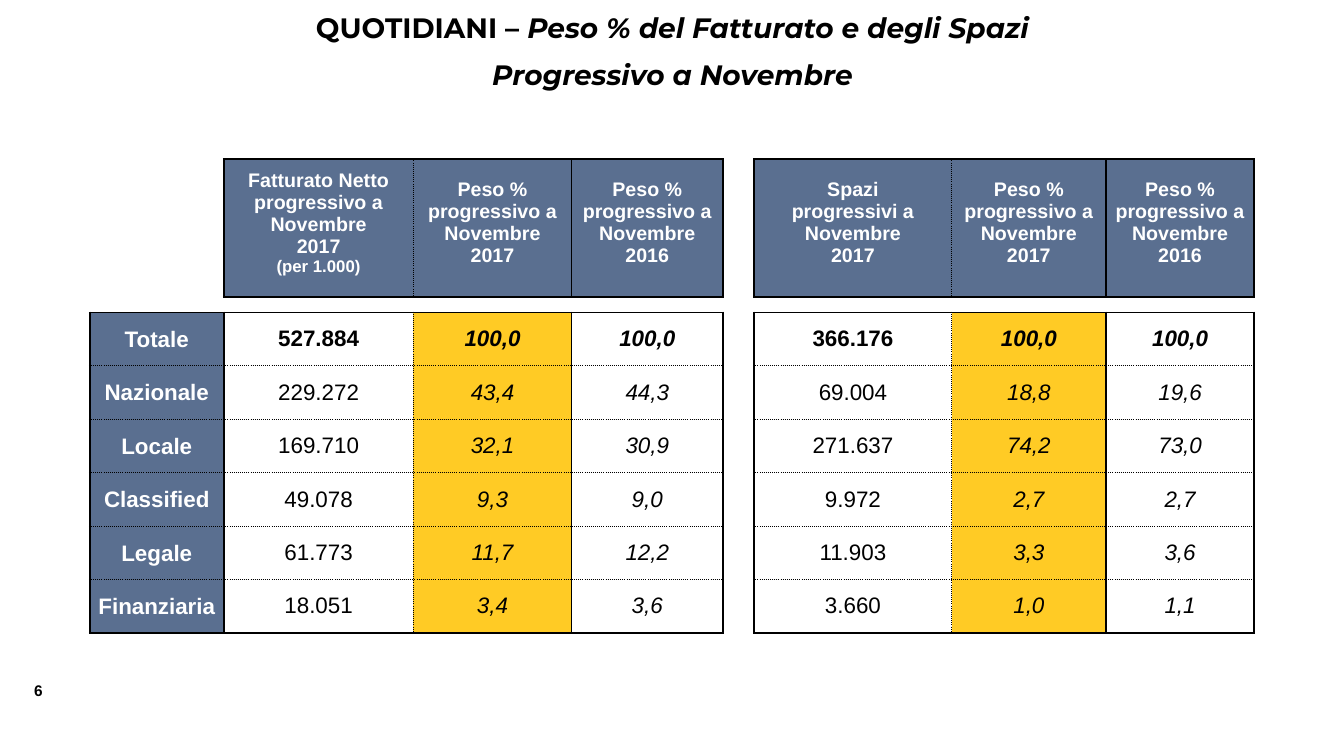
from lxml import etree
from pptx import Presentation
from pptx import util as u
from pptx.dml.color import RGBColor
from pptx.enum import text
from pptx.oxml.ns import qn

PX = 9144  # 100 px to the inch
COLORS = {"black": "000000", "white": "FFFFFF", "blue": "5A6F90", "yellow": "FFCB25"}

COLUMN_WIDTHS = [133, 188, 157, 150, 31, 196, 153, 147]
ROW_HEIGHTS = [137, 15] + [53] * 6
GAP_COLUMN = 4
YELLOW_COLUMNS = (2, 6)
PERCENT_COLUMNS = (2, 3, 6, 7)

# Rule width in points and dash, for each grid line from left to right and top to bottom
THICK, THIN, DOTTED = (1.5, "solid"), (1, "solid"), (1, "sysDot")
VERTICAL_RULES = [THICK] + [THICK, DOTTED, THIN, THICK] * 2
HORIZONTAL_RULES = [THICK] * 3 + [DOTTED] * 5 + [THICK]

WEIGHT_2017 = ["Peso % progressivo a Novembre", "2017"]
WEIGHT_2016 = ["Peso % progressivo a Novembre", "2016"]
HEADERS = [
    None,
    ["Fatturato Netto progressivo a Novembre", [("2017\v", {}), ("(per 1.000)", {"size": 12})]],
    WEIGHT_2017,
    WEIGHT_2016,
    None,
    ["Spazi", "progressivi a Novembre", "2017"],
    WEIGHT_2017,
    WEIGHT_2016,
]
MEDIA = [
    ["Totale", "527.884", "100,0", "100,0", None, "366.176", "100,0", "100,0"],
    ["Nazionale", "229.272", "43,4", "44,3", None, "69.004", "18,8", "19,6"],
    ["Locale", "169.710", "32,1", "30,9", None, "271.637", "74,2", "73,0"],
    ["Classified", "49.078", "9,3", "9,0", None, "9.972", "2,7", "2,7"],
    ["Legale", "61.773", "11,7", "12,2", None, "11.903", "3,3", "3,6"],
    ["Finanziaria", "18.051", "3,4", "3,6", None, "3.660", "1,0", "1,1"],
]


def rgb(name):
    return RGBColor.from_string(COLORS[name])


def write(frame, paragraphs, size=16, font="Arial", color="black", bold=False,
          italic=False, align=text.PP_ALIGN.CENTER, gap=0):
    """Fill a text frame; a paragraph is a string or a list of (string, overrides)."""
    for index, content in enumerate(paragraphs):
        paragraph = frame.paragraphs[0] if index == 0 else frame.add_paragraph()
        paragraph.alignment = align
        paragraph.space_before = u.Pt(gap if index else 0)
        for words, changes in [(content, {})] if isinstance(content, str) else content:
            style = {"size": size, "bold": bold, "italic": italic, **changes}
            for part, piece in enumerate(words.split("\v")):
                if part:
                    paragraph.add_line_break()
                if piece:
                    run = paragraph.add_run()
                    run.text = piece
                    run.font.name = font
                    run.font.size = u.Pt(style["size"])
                    run.font.bold = style["bold"]
                    run.font.italic = style["italic"]
                    run.font.color.rgb = rgb(color)


def set_borders(cell, rules):
    """Add the four edges, given as left, right, top, bottom, ahead of the cell's fill."""
    properties = cell._tc.get_or_add_tcPr()
    for position, (tag, rule) in enumerate(zip(("a:lnL", "a:lnR", "a:lnT", "a:lnB"), rules)):
        line = etree.Element(qn(tag))
        properties.insert(position, line)
        if rule is None:
            etree.SubElement(line, qn("a:noFill"))
            continue
        width, dash = rule
        line.set("w", str(u.Pt(width)))
        fill = etree.SubElement(line, qn("a:solidFill"))
        etree.SubElement(fill, qn("a:srgbClr"), val=COLORS["black"])
        etree.SubElement(line, qn("a:prstDash"), val=dash)


def set_fill(cell, color):
    if color:
        cell.fill.solid()
        cell.fill.fore_color.rgb = rgb(color)
    else:
        cell.fill.background()


def set_margins(cell, side, bottom):
    cell.margin_left = cell.margin_right = cell.margin_top = side * PX
    cell.margin_bottom = bottom * PX


def fill_cell(cell, row, column, content):
    cell.vertical_anchor = text.MSO_ANCHOR.MIDDLE
    set_margins(cell, 0, 0)
    if content is None:
        set_fill(cell, "white" if (row, column) == (0, GAP_COLUMN) else None)
        # A small empty line lets the narrow spacer row keep its height
        etree.SubElement(cell.text_frame.paragraphs[0]._p, qn("a:endParaRPr"), sz="400")
    elif row == 0:
        set_fill(cell, "blue")
        set_margins(cell, 1, 12)
        write(cell.text_frame, content, size=14, color="white", bold=True)
    elif column == 0:
        set_fill(cell, "blue")
        set_margins(cell, 1, 0)
        write(cell.text_frame, [content], color="white", bold=True)
    else:
        set_fill(cell, "yellow" if column in YELLOW_COLUMNS else None)
        write(cell.text_frame, [content], bold=row == 2, italic=column in PERCENT_COLUMNS)


def add_weights_table(slide, left, top):
    grid = [HEADERS, [None] * len(HEADERS)] + MEDIA
    frame = slide.shapes.add_table(
        len(grid), len(HEADERS), left * PX, top * PX,
        sum(COLUMN_WIDTHS) * PX, sum(ROW_HEIGHTS) * PX)
    weights = frame.table
    weights.first_row = weights.horz_banding = False
    for column, width in zip(weights.columns, COLUMN_WIDTHS):
        column.width = width * PX
    for row, height in zip(weights.rows, ROW_HEIGHTS):
        row.height = height * PX

    def has_content(row, column):
        inside = 0 <= row < len(grid) and 0 <= column < len(HEADERS)
        return inside and grid[row][column] is not None

    for r, contents in enumerate(grid):
        for c, content in enumerate(contents):
            edges = [
                (VERTICAL_RULES[c], r, c - 1),
                (VERTICAL_RULES[c + 1], r, c + 1),
                (HORIZONTAL_RULES[r], r - 1, c),
                (HORIZONTAL_RULES[r + 1], r + 1, c),
            ]
            rules = [rule if has_content(r, c) or has_content(*neighbour) else None
                     for rule, *neighbour in edges]
            cell = weights.cell(r, c)
            fill_cell(cell, r, c, content)
            set_borders(cell, rules)


def add_title(slide):
    title = slide.shapes.title
    title.left, title.top, title.width, title.height = (n * PX for n in (167, 5, 1000, 94))
    frame = title.text_frame
    frame.word_wrap = True
    frame.auto_size = text.MSO_AUTO_SIZE.NONE
    frame.vertical_anchor = text.MSO_ANCHOR.TOP
    write(frame, [
        [("QUOTIDIANI – ", {"italic": False}), ("Peso % del Fatturato e degli Spazi", {})],
        "Progressivo a Novembre",
    ], size=20, font="Montserrat", bold=True, italic=True, gap=10)


def add_page_number(slide, number):
    box = slide.shapes.add_textbox(24 * PX, 671 * PX, 42 * PX, 29 * PX)
    box.text_frame.word_wrap = True
    write(box.text_frame, [number], size=11, bold=True, align=text.PP_ALIGN.LEFT)


def main():
    deck = Presentation()
    deck.slide_width, deck.slide_height = 1333 * PX, 750 * PX
    slide = deck.slides.add_slide(deck.slide_layouts.get_by_name("Title Only"))
    add_title(slide)
    add_weights_table(slide, 89, 158)
    add_page_number(slide, "6")
    deck.save("out.pptx")


if __name__ == "__main__":
    main()
